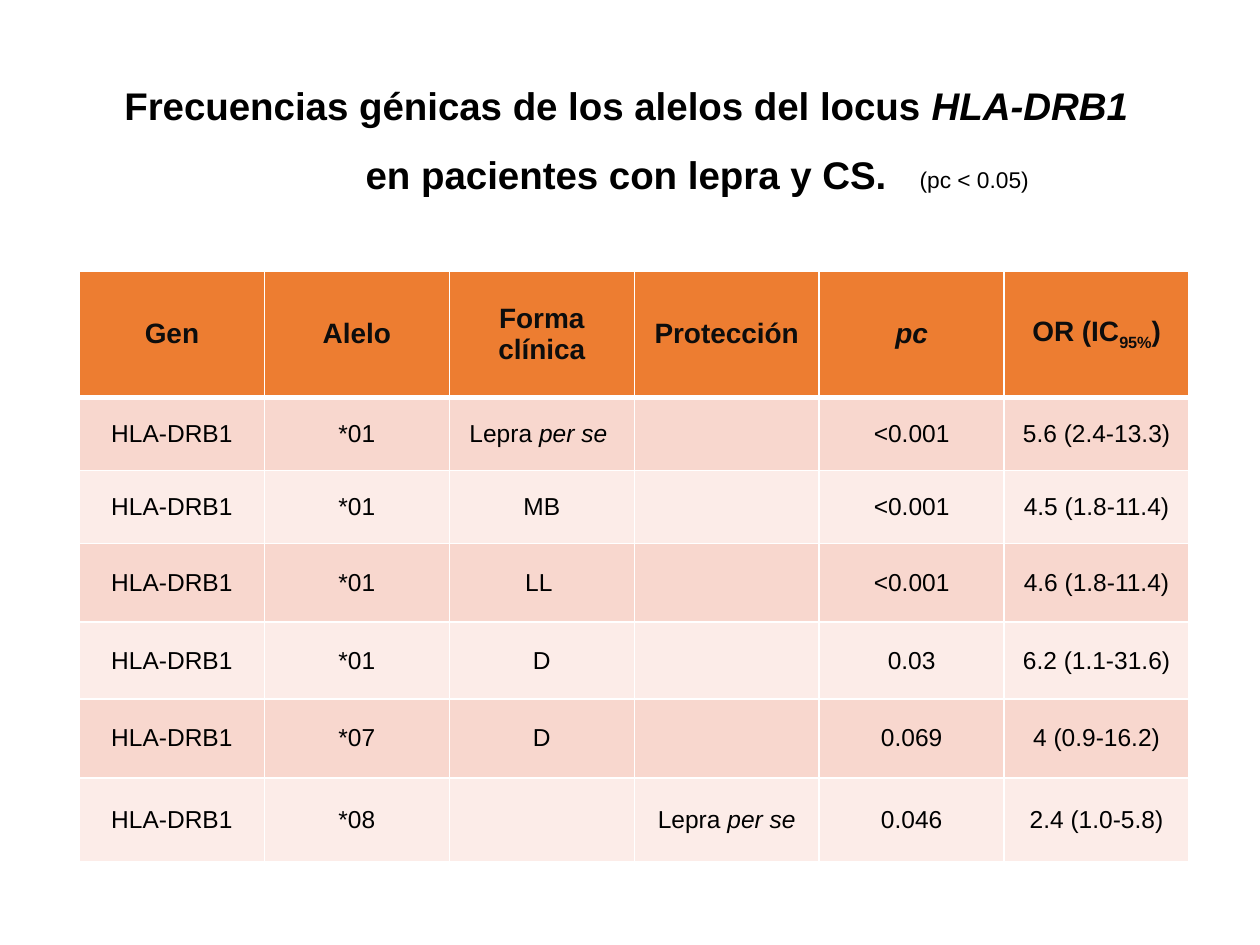
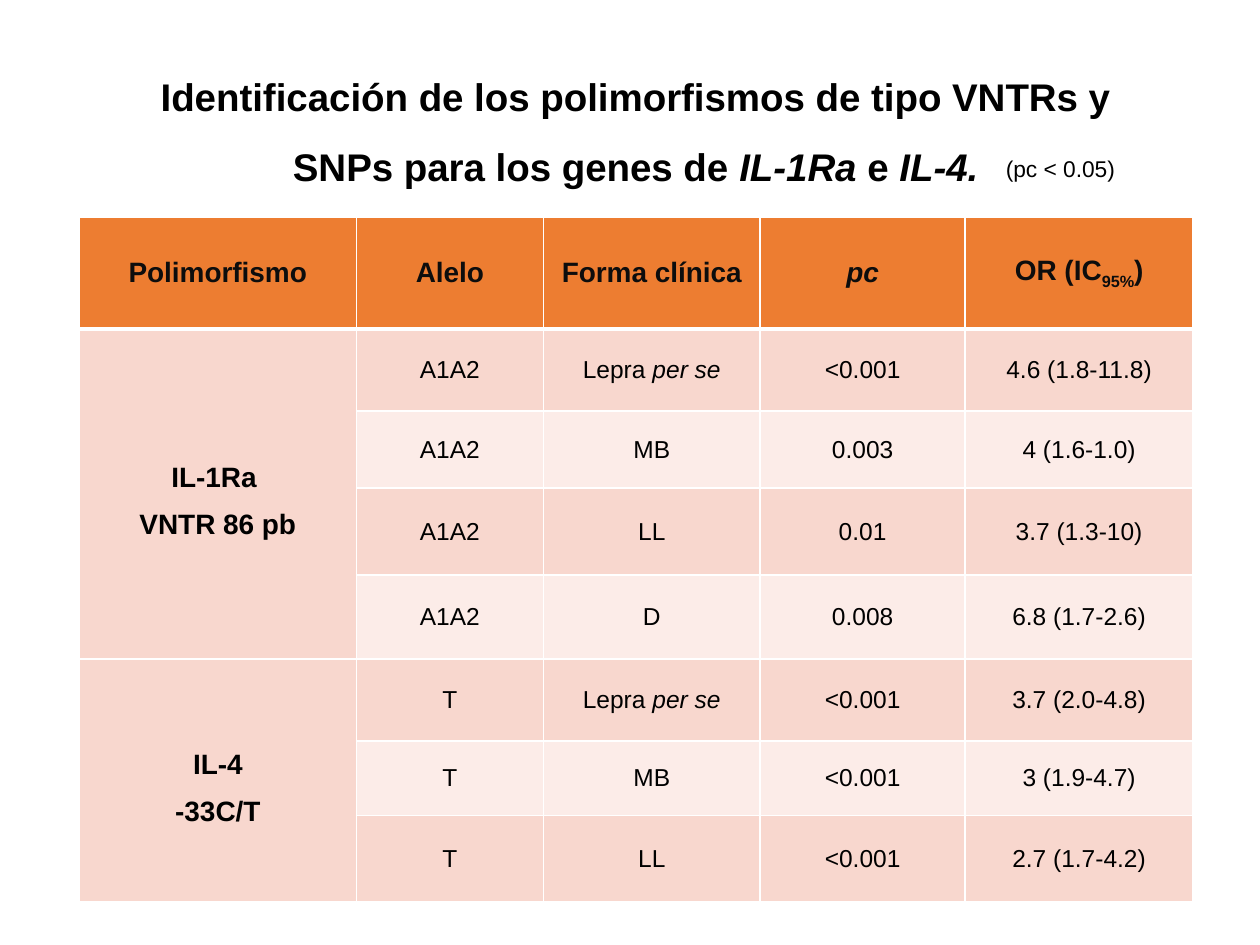
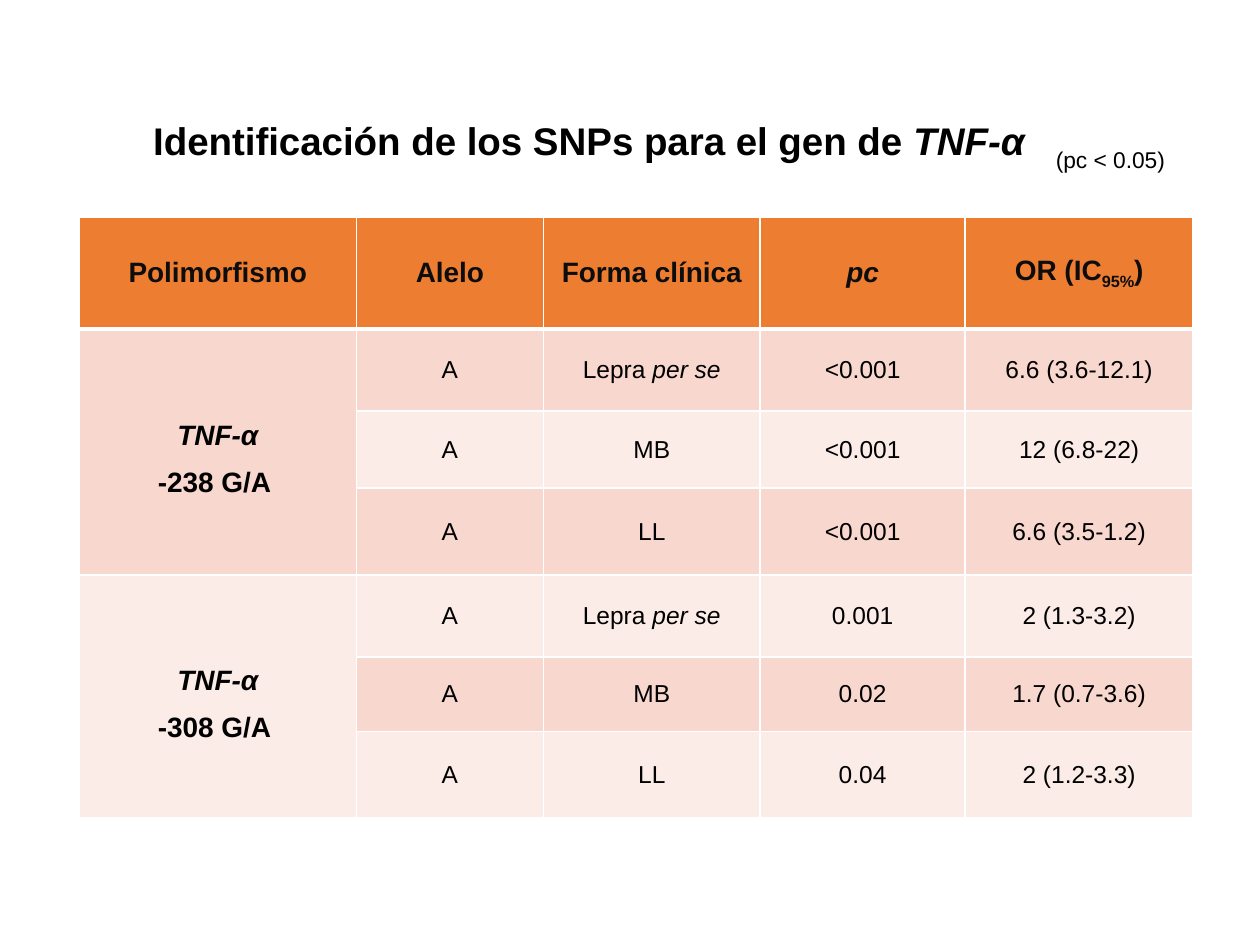
from lxml.etree import SubElement
from pptx import Presentation
from pptx.dml.color import RGBColor
from pptx.enum.text import MSO_ANCHOR, MSO_AUTO_SIZE, PP_ALIGN
from pptx.oxml.ns import qn
from pptx.util import Pt

# In all texts, _..._ marks italics and ~...~ marks a subscript.
COLORS = {
    "text": "000000",
    "header_text": "0D0D0D",
    "header": "ED7D31",
    "band_dark": "F8D7CE",
    "band_light": "FCECE8",
    "border": "FFFFFF",
}
FONT = "Arial"
TITLE_SIZE, NOTE_SIZE, HEAD_SIZE, BODY_SIZE = 22, 13, 16, 14
THIN, THICK = 1, 3
TABLE_LEFT = 45.4
NOTE = "(pc < 0.05)"

ALLELE_HEADER = ["Gen", "Alelo", "Forma clínica", "Protección", "_pc_", "OR (IC~95%~)"]
ALLELE_COLS = [105.7] * 6
GENE = "HLA-DRB1"
ALLELE_ROWS = [
    [GENE, "*01", "Lepra _per se _", "", "<0.001", "5.6 (2.4-13.3)"],
    [GENE, "*01", "MB", "", "<0.001", "4.5 (1.8-11.4)"],
    [GENE, "*01", "LL ", "", "<0.001", "4.6 (1.8-11.4)"],
    [GENE, "*01", "D", "", "0.03", "6.2 (1.1-31.6)"],
    [GENE, "*07", "D", "", "0.069", "4 (0.9-16.2)"],
    [GENE, "*08", "", "Lepra _per se_", "0.046", "2.4 (1.0-5.8)"],
]

POLY_HEADER = ["Polimorfismo", "Alelo", "Forma clínica", "_pc_", "OR (IC~95%~)"]
POLY_COLS = [158.2, 107, 123.8, 117.2, 130.3]
INTERLEUKIN_GROUPS = [
    ("IL-1Ra \nVNTR 86 pb", [
        ["A1A2", "Lepra_ per se_", "<0.001", "4.6 (1.8-11.8)"],
        ["A1A2", "MB", "0.003", "4 (1.6-1.0)"],
        ["A1A2", "LL", "0.01", "3.7 (1.3-10)"],
        ["A1A2", "D", "0.008", "6.8 (1.7-2.6)"],
    ]),
    ("IL-4\n-33C/T", [
        ["T", "Lepra _per se_", "<0.001", "3.7 (2.0-4.8)"],
        ["T", "MB", "<0.001", "3 (1.9-4.7)"],
        ["T", "LL", "<0.001", "2.7 (1.7-4.2)"],
    ]),
]
TNF_GROUPS = [
    ("_TNF-α_\n-238 G/A ", [
        ["A", "Lepra_ per se_", "<0.001", "6.6 (3.6-12.1)"],
        ["A", "MB", "<0.001", "12 (6.8-22)"],
        ["A", "LL", "<0.001", "6.6 (3.5-1.2)"],
    ]),
    ("_TNF-α_\n-308 G/A ", [
        ["A", "Lepra _per se_", "0.001", "2 (1.3-3.2)"],
        ["A", "MB", "0.02", "1.7 (0.7-3.6)"],
        ["A", "LL", "0.04", "2 (1.2-3.3)"],
    ]),
]

SLIDES = [
    {
        "title": "Frecuencias génicas de los alelos del locus _HLA-DRB1_ en pacientes con lepra y CS.",
        "title_box": (60.5, 30.2, 594.7, 82.8),
        "note_box": (518.4, 91.4, 109.4, 23),
        "note_format": (PP_ALIGN.LEFT, 1),
        "header": ALLELE_HEADER,
        "cols": ALLELE_COLS,
        "groups": [(row[0], [row[1:]]) for row in ALLELE_ROWS],
        "top": 155,
        "heights": [72, 42, 41.5, 45, 44, 45, 48],
    },
    {
        "title": "Identificación de los polimorfismos de tipo VNTRs y SNPs "
                 "para los genes de _IL-1Ra_ e _IL-4._",
        "title_box": (60.5, 25.2, 605.5, 82),
        "note_box": (562.3, 77, 87.1, 28),
        "note_format": (PP_ALIGN.CENTER, 1.5),
        "header": POLY_HEADER,
        "cols": POLY_COLS,
        "groups": INTERLEUKIN_GROUPS,
        "top": 124,
        "heights": [64, 47, 44, 49.5, 48, 47, 42.5, 49.5],
    },
    {
        "title": "Identificación de los SNPs para el gen de _TNF-α_",
        "title_box": (33.8, 50.4, 605.5, 42.5),
        "note_box": (596.2, 72, 87.1, 31),
        "note_format": (PP_ALIGN.LEFT, 1.5),
        "header": POLY_HEADER,
        "cols": POLY_COLS,
        "groups": TNF_GROUPS,
        "top": 124,
        "heights": [64, 47, 44, 49.5, 47, 42.5, 49.5],
    },
]


def write(tf, text, size, bold=False, color="text", align=PP_ALIGN.CENTER, spacing=1):
    """Write marked-up text, one paragraph per line."""
    for n, line in enumerate(text.split("\n")):
        p = tf.add_paragraph() if n else tf.paragraphs[0]
        p.alignment = align
        p.line_spacing = spacing
        for i, part in enumerate(line.split("_")):
            for j, piece in enumerate(part.split("~")):
                if not piece:
                    continue
                r = p.add_run()
                r.text = piece
                r.font.name = FONT
                r.font.size = Pt(size)
                r.font.bold = bold
                r.font.italic = i % 2 == 1
                r.font.color.rgb = RGBColor.from_string(COLORS[color])
                if j % 2:
                    r._r.get_or_add_rPr().set("baseline", "-25000")


def add_text(shapes, box, text, size, **style):
    sp = shapes.add_textbox(*map(Pt, box))
    tf = sp.text_frame
    tf.word_wrap = True
    tf.auto_size = MSO_AUTO_SIZE.SHAPE_TO_FIT_TEXT
    write(tf, text, size, **style)


def format_cell(cell, row):
    """Set the borders first, then the fill, as the schema orders them."""
    tc_pr = cell._tc.get_or_add_tcPr()
    widths = {"L": THIN, "R": THIN,
              "T": THICK if row == 1 else THIN,
              "B": THICK if row == 0 else THIN}
    for side, width in widths.items():
        ln = SubElement(tc_pr, qn(f"a:ln{side}"), w=str(Pt(width)))
        fill = SubElement(ln, qn("a:solidFill"))
        SubElement(fill, qn("a:srgbClr"), val=COLORS["border"])
    band = "header" if row == 0 else "band_dark" if row % 2 else "band_light"
    cell.fill.solid()
    cell.fill.fore_color.rgb = RGBColor.from_string(COLORS[band])
    cell.vertical_anchor = MSO_ANCHOR.MIDDLE


def add_results_table(s, header, cols, groups, top, heights):
    frame = s.shapes.add_table(len(heights), len(cols), Pt(TABLE_LEFT), Pt(top),
                               Pt(sum(cols)), Pt(sum(heights)))
    table = frame.table
    table.first_row = table.horz_banding = False
    for column, width in zip(table.columns, cols):
        column.width = Pt(width)
    for i, height in enumerate(heights):
        table.rows[i].height = Pt(height)
        for cell in table.rows[i].cells:
            format_cell(cell, i)

    for j, text in enumerate(header):
        write(table.cell(0, j).text_frame, text, HEAD_SIZE, bold=True, color="header_text")
    first = 1
    for label, rows in groups:
        label_cell = table.cell(first, 0)
        if len(rows) > 1:
            label_cell.merge(table.cell(first + len(rows) - 1, 0))
            write(label_cell.text_frame, label, HEAD_SIZE, bold=True, spacing=1.5)
        else:
            write(label_cell.text_frame, label, BODY_SIZE)
        for i, row in enumerate(rows, first):
            for j, text in enumerate(row, 1):
                write(table.cell(i, j).text_frame, text, BODY_SIZE)
        first += len(rows)


def main():
    prs = Presentation()
    prs.slide_width, prs.slide_height = Pt(720), Pt(540)
    for d in SLIDES:
        s = prs.slides.add_slide(prs.slide_layouts[6])
        add_results_table(s, d["header"], d["cols"], d["groups"], d["top"], d["heights"])
        heading = s.shapes.add_group_shape().shapes
        add_text(heading, d["title_box"], d["title"], TITLE_SIZE, bold=True, spacing=1.5)
        align, spacing = d["note_format"]
        add_text(heading, d["note_box"], NOTE, NOTE_SIZE, align=align, spacing=spacing)
    prs.save("out.pptx")


if __name__ == "__main__":
    main()
